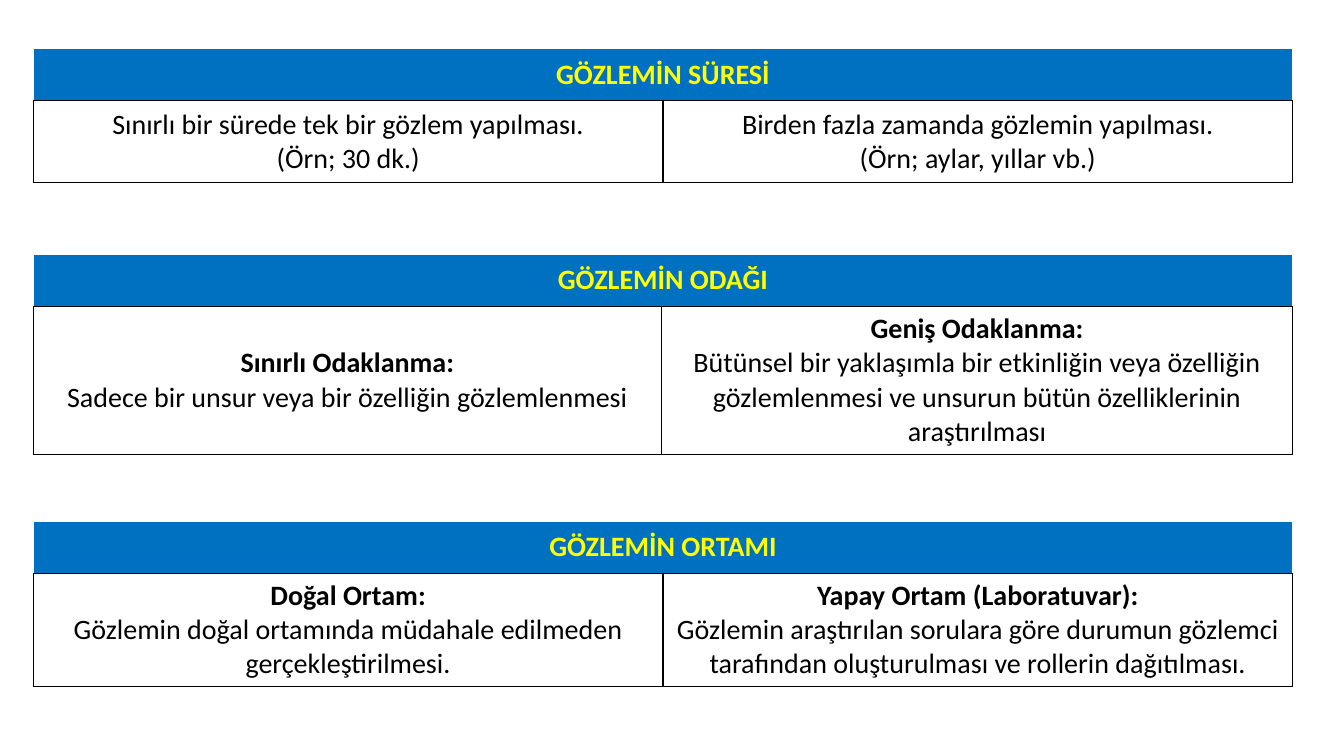
from lxml.etree import SubElement as Sub
from pptx import Presentation
from pptx.dml.color import RGBColor as RGB
from pptx.enum.text import MSO_ANCHOR as Anchor, PP_ALIGN as Align
from pptx.oxml.ns import qn
from pptx.util import Inches, Pt

BLUE, YELLOW, BLACK, WHITE = "0070C0", "FFFF00", "000000", "FFFFFF"

# Title, top, body height and first column (percent of slide), then two cells;
# each cell has a bold heading (or None) and its plain lines.
TOPICS = [
    ("GÖZLEMİN SÜRESİ", 6.4, 10.8, 46.85,
     [(None, ["Sınırlı bir sürede tek bir gözlem yapılması.", "(Örn; 30 dk.)"]),
      (None, ["Birden fazla zamanda gözlemin yapılması.", "(Örn; aylar, yıllar vb.)"])]),
    ("GÖZLEMİN ODAĞI", 33.6, 19.6, 46.74,
     [("Sınırlı Odaklanma:", ["Sadece bir unsur veya bir özelliğin gözlemlenmesi"]),
      ("Geniş Odaklanma:", ["Bütünsel bir yaklaşımla bir etkinliğin veya özelliğin "
                            "gözlemlenmesi ve unsurun bütün özelliklerinin araştırılması"])]),
    ("GÖZLEMİN ORTAMI", 68.93, 14.93, 46.85,
     [("Doğal Ortam:", ["Gözlemin doğal ortamında müdahale edilmeden gerçekleştirilmesi."]),
      ("Yapay Ortam (Laboratuvar):", ["Gözlemin araştırılan sorulara göre durumun gözlemci "
                                      "tarafından oluşturulması ve rollerin dağıtılması."])]),
]


def color(code):
    return RGB.from_string(code)


class Deck:
    font, size = "Calibri", Pt(20)
    left, width, head = 2.48, 93.7, 6.93

    def __init__(self):
        self.prs = Presentation()
        self.prs.slide_width, self.prs.slide_height = Inches(13.33), Inches(7.5)
        self.slide = self.prs.slides.add_slide(self.prs.slide_layouts[6])

    def across(self, share):
        return int(self.prs.slide_width * share / 100)

    def down(self, share):
        return int(self.prs.slide_height * share / 100)

    def edges(self, cell, sides):
        """Draw 1 pt borders; sides holds the left, right, top and bottom colours."""
        props = cell._tc.get_or_add_tcPr()
        for side, code in zip("LRTB", sides):
            line = Sub(props, qn(f"a:ln{side}"), w=str(Pt(1)))
            Sub(Sub(line, qn("a:solidFill")), qn("a:srgbClr"), val=code)

    def label(self, cell, heading, lines, ink):
        cell.vertical_anchor = Anchor.MIDDLE
        frame = cell.text_frame
        frame.text = "\n".join(([heading] if heading else []) + lines)
        for i, par in enumerate(frame.paragraphs):
            par.alignment = Align.CENTER
            for run in par.runs:
                font = run.font
                font.name, font.size = self.font, self.size
                font.bold = bool(heading) and i == 0
                font.color.rgb = color(ink)

    def table(self, title, top, body, first, cells):
        grid = self.slide.shapes.add_table(
            2, 2, self.across(self.left), self.down(top),
            self.across(self.width), self.down(self.head + body)).table
        grid.first_row = grid.horz_banding = False
        for col, share in zip(grid.columns, (first, self.width - first)):
            col.width = self.across(share)
        for row, share in zip(grid.rows, (self.head, body)):
            row.height = self.down(share)
        grid.cell(0, 0).merge(grid.cell(0, 1))
        for i, (heading, lines) in enumerate(cells):
            bar, cell = grid.cell(0, i), grid.cell(1, i)
            self.edges(bar, [WHITE] * 3 + [BLACK])
            bar.fill.solid()
            bar.fill.fore_color.rgb = color(BLUE)
            self.edges(cell, [BLACK] * 4)
            cell.fill.background()
            self.label(cell, heading, lines, BLACK)
        self.label(grid.cell(0, 0), title, [], YELLOW)


def main():
    deck = Deck()
    for topic in TOPICS:
        deck.table(*topic)
    deck.prs.save("out.pptx")


if __name__ == "__main__":
    main()
